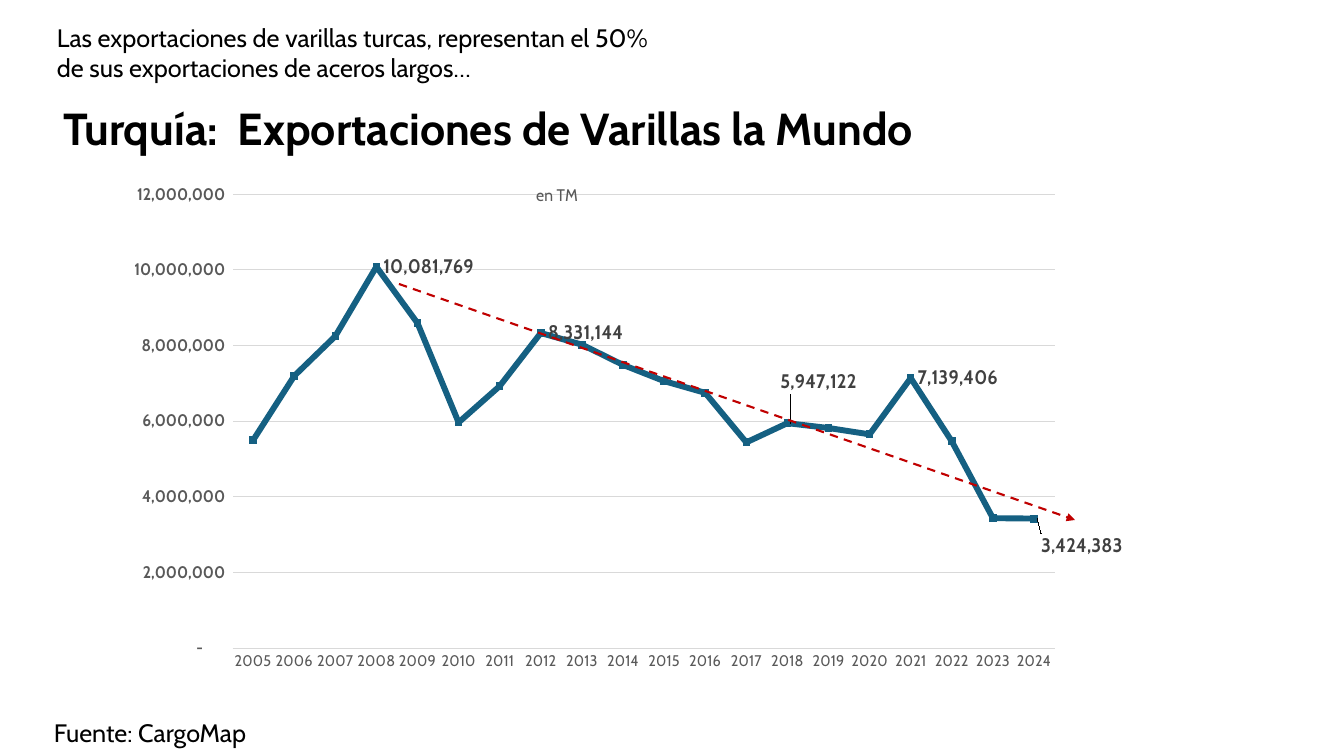
from lxml import etree
from pptx import Presentation
from pptx.chart.data import CategoryChartData
from pptx.dml.color import RGBColor
from pptx.enum.chart import XL_CHART_TYPE, XL_LABEL_POSITION, XL_TICK_MARK
from pptx.enum.dml import MSO_LINE
from pptx.enum.shapes import MSO_CONNECTOR
from pptx.enum.text import MSO_ANCHOR, PP_ALIGN
from pptx.oxml import parse_xml
from pptx.oxml.ns import nsdecls, qn
from pptx.util import Pt

LINE = XL_CHART_TYPE.LINE
RIGHT = XL_LABEL_POSITION.RIGHT
NONE = XL_TICK_MARK.NONE
DASH = MSO_LINE.DASH
STRAIGHT = MSO_CONNECTOR.STRAIGHT
TOP = MSO_ANCHOR.TOP
LEFT = PP_ALIGN.LEFT

PX = 914400 / 100.8
FACE = "Cabin"
HUES = {"ink": "000000", "axis": "595959", "grid": "D9D9D9",
        "label": "404040", "steel": "156082", "trend": "C00000"}


def style(font, size, hue, bold=False):
    font.name = FACE
    font.size = Pt(size)
    font.bold = bold
    font.color.rgb = RGBColor.from_string(HUES[hue])


def write(text, box, shape=None, size=18, bold=False):
    area = [round(n * PX) for n in box]
    shape = shape or slide.shapes.add_textbox(*area)
    shape.left, shape.top, shape.width, shape.height = area
    frame = shape.text_frame
    frame.word_wrap = True
    frame.vertical_anchor = TOP
    para = frame.paragraphs[0]
    para.alignment = LEFT
    run = para.add_run()
    run.text = text
    style(run.font, size, "ink", bold)


deck = Presentation()
deck.slide_width = round(1344 * PX)
deck.slide_height = round(756 * PX)
slide = deck.slides.add_slide(deck.slide_layouts[5])

write("Fuente: CargoMap", (44, 712, 346, 40))

data = CategoryChartData(number_format="#,##0")
data.categories = [str(year) for year in range(2005, 2025)]
data.add_series("Varillas", [
    5496951, 7193411, 8246784, 10081769, 8590832, 5966118, 6926312,
    8331144, 8023451, 7487795, 7059981, 6749491, 5438898, 5947122,
    5819917, 5650706, 7139406, 5466691, 3434700, 3424383])
area = [round(n * PX) for n in (127, 160, 996, 536)]
chart = slide.shapes.add_chart(LINE, *area, data).chart
chart.has_legend = False
style(chart.font, 11, "ink")

chart.has_title = True
title = chart.chart_title
title.include_in_layout = False
run = title.text_frame.paragraphs[0].add_run()
run.text = "en TM"
style(run.font, 12, "axis")

years = chart.category_axis
years.major_tick_mark = NONE
years.format.line.color.rgb = RGBColor.from_string(HUES["grid"])
years.format.line.width = Pt(0.75)
style(years.tick_labels.font, 11, "axis")

tons = chart.value_axis
tons.minimum_scale = 0
tons.maximum_scale = 12000000
tons.major_unit = 2000000
tons.major_tick_mark = NONE
tons.format.line.fill.background()
grid = tons.major_gridlines.format.line
grid.color.rgb = RGBColor.from_string(HUES["grid"])
grid.width = Pt(0.75)
style(tons.tick_labels.font, 12, "axis", True)
tons.tick_labels.number_format = '_(* #,##0_);_(* \\(#,##0\\);_(* "-"??_);_('
tons.tick_labels.number_format_is_linked = False

plot = chart.plots[0]
plot.vary_by_categories = False
steel = plot.series[0]
steel.smooth = False
steel.marker.style = None
steel.format.line.color.rgb = RGBColor.from_string(HUES["steel"])
steel.format.line.width = Pt(4.5)
steel.data_labels.show_value = False

moves = {13: (-0.015, -0.077), 19: (0, 0.05)}
spots = []
for index in (3, 7, 13, 16, 19):
    label = steel.points[index].data_label
    style(label.font, 14, "label", True)
    label.position = RIGHT
labels = steel.data_labels._element
for node in labels.findall(qn("c:dLbl")):
    index = int(node.find(qn("c:idx")).get("val"))
    if index in moves:
        spots.append((node, 1, moves[index]))
labels.append(parse_xml(
    f'<c:extLst {nsdecls("c")}><c:ext uri="{{CE6537A1-D6FC-4f65-9D91-7224C49458BB}}" '
    'xmlns:c15="http://schemas.microsoft.com/office/drawing/2012/chart">'
    '<c15:showLeaderLines val="1"/></c:ext></c:extLst>'))

frame = chart._chartSpace.chart.plotArea
spots.append((frame, 0, (0.113, 0.064, 0.88, 0.847)))
spots.append((title._element, 1, (0.435, 0.038)))
for node, place, sizes in spots:
    for old in node.findall(qn("c:layout")):
        node.remove(old)
    layout = etree.Element(qn("c:layout"))
    manual = etree.SubElement(layout, qn("c:manualLayout"))
    if node is frame:
        etree.SubElement(manual, qn("c:layoutTarget")).set("val", "inner")
    if node.tag != qn("c:dLbl"):
        for mode in ("xMode", "yMode"):
            etree.SubElement(manual, qn("c:" + mode)).set("val", "edge")
    for key, size in zip("xywh", sizes):
        etree.SubElement(manual, qn("c:" + key)).set("val", str(size))
    node.insert(place, layout)

write("Turquía:  Exportaciones de Varillas la Mundo", (53, 96, 1088, 65),
      shape=slide.shapes.title, size=32, bold=True)

ends = [round(n * PX) for n in (399, 284, 1075, 520)]
trend = slide.shapes.add_connector(STRAIGHT, *ends)
trend.line.color.rgb = RGBColor.from_string(HUES["trend"])
trend.line.width = Pt(1.5)
trend.line.dash_style = DASH
etree.SubElement(trend.line._get_or_add_ln(), qn("a:tailEnd")).set("type", "triangle")
etree.SubElement(trend._element.spPr, qn("a:effectLst"))

write("Las exportaciones de varillas turcas, representan el 50% "
      "de sus exportaciones de aceros largos…", (47, 17, 625, 72))

deck.save("out.pptx")
